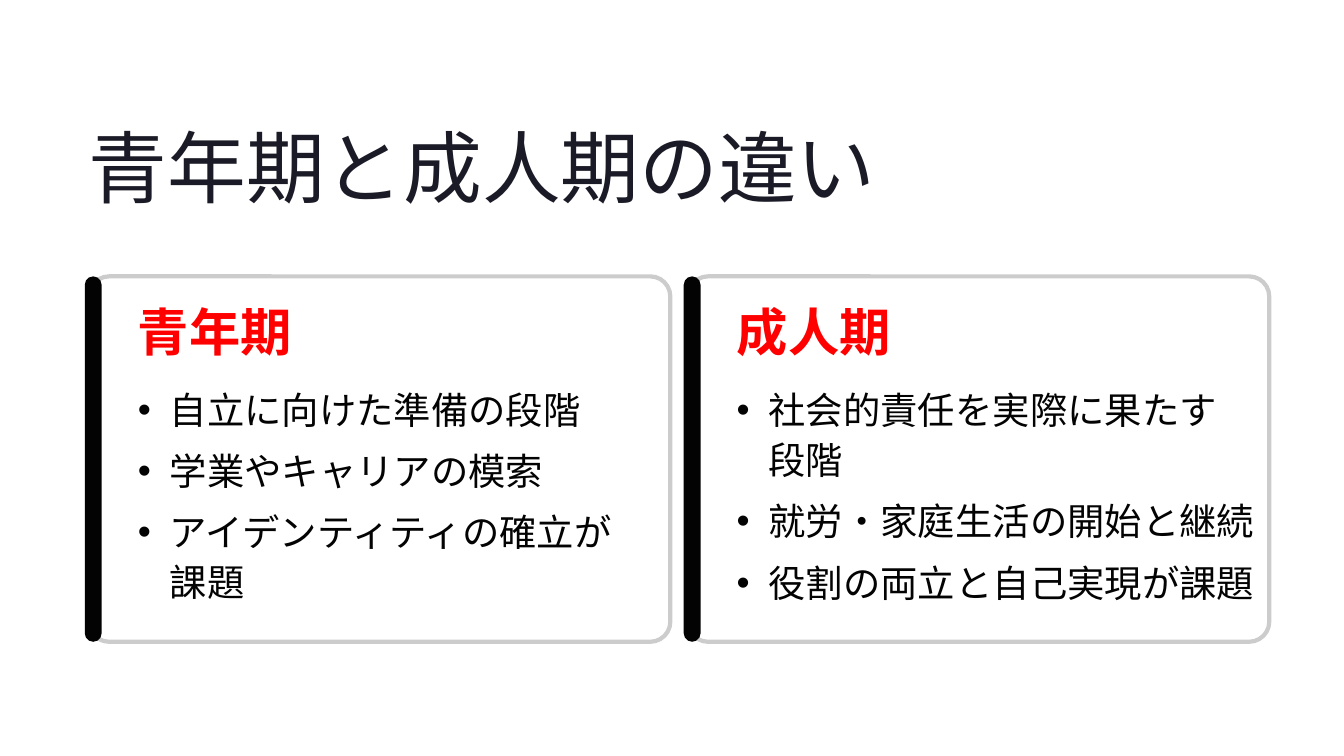
from dataclasses import dataclass

from lxml.etree import SubElement
from pptx import Presentation
from pptx.dml.color import RGBColor
from pptx.enum.shapes import MSO_SHAPE
from pptx.oxml.ns import qn
from pptx.util import Inches, Pt


@dataclass(frozen=True)
class Theme:
    title_font: str = "Inter"
    body_font: str = "Roboto"
    title_size: float = 67.5
    heading_size: float = 44
    body_size: float = 32
    title_color: str = "1B1B27"
    heading_color: str = "FF0000"
    ink: str = "030303"
    card_fill: str = "FFFFFF"
    card_line: str = "CCCCCC"


theme = Theme()


def add_text(text, left, top, width, height, font, size, color, line_height, wrap=False):
    """Add a text box without margins and return its paragraph."""
    box = page.shapes.add_textbox(Inches(left), Inches(top), Inches(width), Inches(height))
    frame = box.text_frame
    frame.word_wrap = wrap
    frame.margin_left = frame.margin_right = frame.margin_top = frame.margin_bottom = 0
    para = frame.paragraphs[0]
    para.text = text
    para.line_spacing = Pt(line_height)
    span = para.runs[0]
    span.font.name = font
    span.font.size = Pt(size)
    span.font.color.rgb = RGBColor.from_string(color)
    return para


def add_rounded(left, top, width, height, radius, fill):
    shape = page.shapes.add_shape(
        MSO_SHAPE.ROUNDED_RECTANGLE, Inches(left), Inches(top), Inches(width), Inches(height))
    shape.shadow.inherit = False
    shape.adjustments[0] = radius
    shape.fill.solid()
    shape.fill.fore_color.rgb = RGBColor.from_string(fill)
    shape.line.fill.background()
    return shape


deck = Presentation()
deck.slide_width, deck.slide_height = Inches(16), Inches(9)
page = deck.slides.add_slide(deck.slide_layouts[6])

add_text("青年期と成人期の違い", 1.06, 1.36, 9.43, 1.18,
         theme.title_font, theme.title_size, theme.title_color, 84.5)

# Each bullet is paired with the number of lines it takes
cards = [
    ("青年期", [("自立に向けた準備の段階", 1),
             ("学業やキャリアの模索", 1),
             ("アイデンティティの確立が課題", 2)]),
    ("成人期", [("社会的責任を実際に果たす段階", 2),
             ("就労・家庭生活の開始と継続", 1),
             ("役割の両立と自己実現が課題", 1)]),
]
card_left, card_top, card_width, card_height = 1.06, 3.29, 6.92, 4.35
card_step = 7.13
text_inset = 0.58
line_step, bullet_gap, bullet_indent = 0.6, 0.13, 0.38
# Single lines need the full room beside the card's edge to stay unbroken
single_width, wrapped_width = 6.25, 5.75

for index, (heading, bullets) in enumerate(cards):
    left = card_left + index * card_step
    card = add_rounded(left, card_top, card_width, card_height, 0.055, theme.card_fill)
    card.line.color.rgb = RGBColor.from_string(theme.card_line)
    card.line.width = Pt(3.6)
    fill_color = card.fill._xPr.find(qn("a:solidFill"))[0]
    SubElement(fill_color, qn("a:alpha"), val="95000")
    add_rounded(left - 0.05, card_top, 0.2, card_height, 0.5, theme.ink)

    text_left = left + text_inset
    para = add_text(heading, text_left, 3.72, 4.72, 0.59,
                    theme.title_font, theme.heading_size, theme.heading_color, 42)
    para.runs[0].font.bold = True

    top = 4.54
    for bullet, lines in bullets:
        wraps = lines > 1
        width = wrapped_width if wraps else single_width
        height = lines * line_step
        para = add_text(bullet, text_left, top, width, height,
                        theme.body_font, theme.body_size, theme.ink, 43, wraps)
        properties = para._p.get_or_add_pPr()
        properties.set("marL", str(Inches(bullet_indent)))
        properties.set("indent", str(-Inches(bullet_indent)))
        SubElement(properties, qn("a:buFont"), typeface="Arial")
        SubElement(properties, qn("a:buChar"), char="•")
        top += height + bullet_gap

deck.save("out.pptx")
